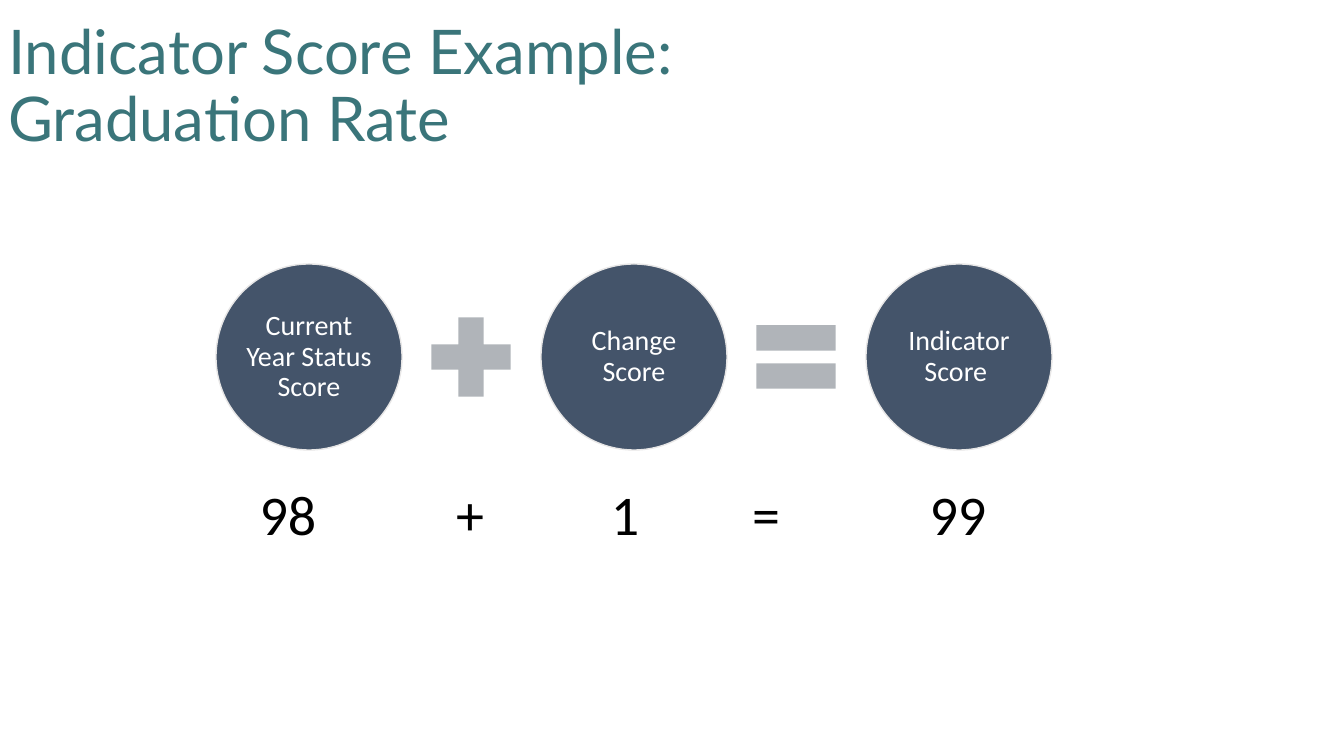
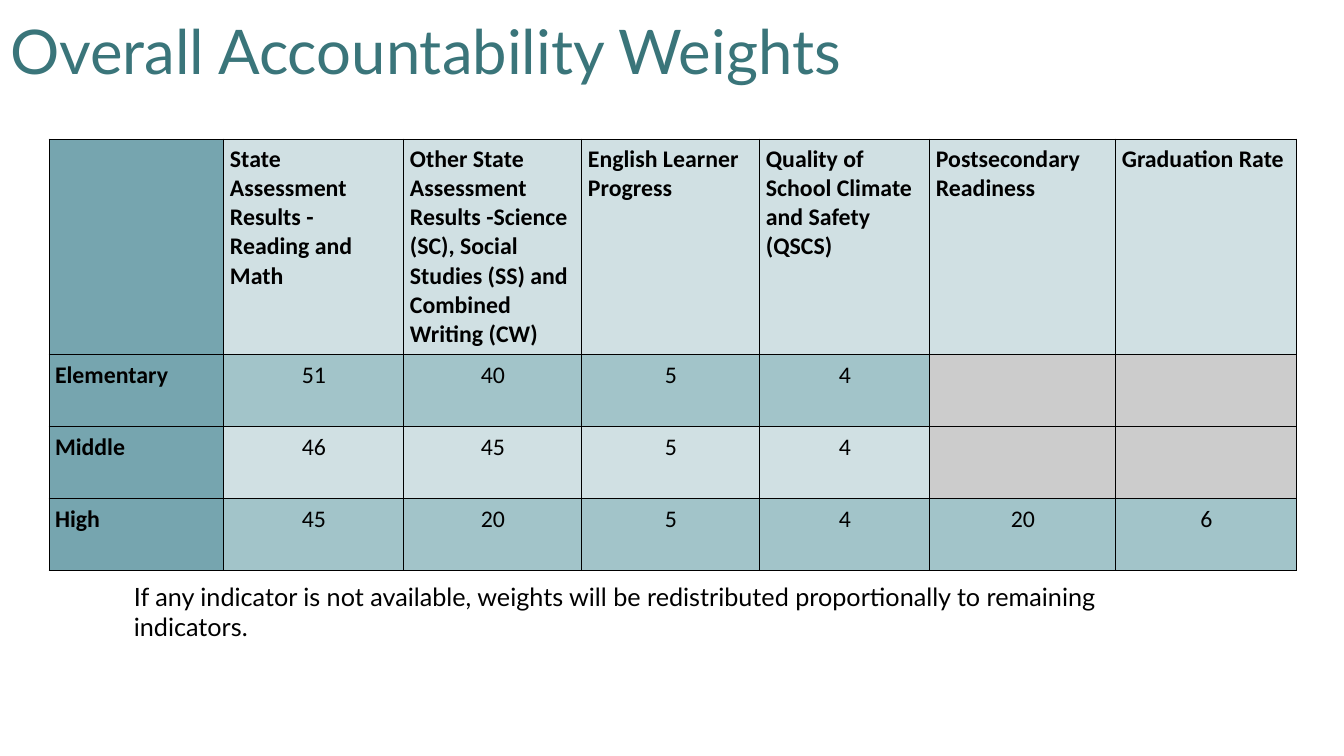
from dataclasses import dataclass

from lxml import etree
from pptx import Presentation
from pptx.dml.color import RGBColor
from pptx.enum.shapes import MSO_SHAPE
from pptx.enum.text import MSO_ANCHOR, MSO_AUTO_SIZE, PP_ALIGN
from pptx.oxml.ns import qn
from pptx.util import Emu, Pt

LEFT, CENTER = PP_ALIGN.LEFT, PP_ALIGN.CENTER
MIDDLE = MSO_ANCHOR.MIDDLE
ELLIPSE, PLUS, EQUAL = MSO_SHAPE.OVAL, MSO_SHAPE.MATH_PLUS, MSO_SHAPE.MATH_EQUAL
EMU_PER_PX = 914400 / 100.8
TITLE_ONLY = 5


@dataclass(frozen=True)
class Theme:
    title_font: str = "Lato"
    body_font: str = "Calibri"
    title: str = "3A757A"
    black: str = "000000"
    white: str = "FFFFFF"
    circle: str = "44546A"
    circle_line: str = "E7E6E6"
    sign: str = "B0B4B9"
    row_label: str = "76A5AF"
    light_row: str = "D0E0E3"
    dark_row: str = "A2C4C9"
    not_used: str = "CCCCCC"
    title_size: int = 44
    sum_size: int = 40
    circle_size: int = 20
    table_size: int = 17
    note_size: int = 18


theme = Theme()


def px(*lengths):
    return [Emu(round(length * EMU_PER_PX)) for length in lengths]


def add_run(paragraph, text, size, color, font=theme.body_font, bold=False):
    run = paragraph.add_run()
    run.text = text
    run.font.name = font
    run.font.size = Pt(size)
    run.font.bold = bold
    run.font.color.rgb = RGBColor.from_string(color)


presentation = Presentation()
presentation.slide_width, presentation.slide_height = px(1344, 756)

# Slides with their titles
slides = []
for title_left, title_top, title_lines in [
    (-2, 15, ["Indicator Score Example:", "Graduation Rate"]),
    (0, -18, ["Overall Accountability Weights"]),
]:
    slide = presentation.slides.add_slide(presentation.slide_layouts[TITLE_ONLY])
    title = slide.shapes.title
    title.left, title.top, title.width, title.height = px(title_left, title_top, 1159, 146)
    title.text_frame.auto_size = MSO_AUTO_SIZE.NONE
    title.text_frame.vertical_anchor = MIDDLE
    paragraph = title.text_frame.paragraphs[0]
    paragraph.alignment = LEFT
    paragraph.line_spacing = 0.9
    for index, line in enumerate(title_lines):
        if index:
            paragraph.add_line_break()
        add_run(paragraph, line, theme.title_size, theme.title, theme.title_font)
    slides.append(slide)
score_slide, weights_slide = slides

# Score equation: circles with a sign centred in each gap
CIRCLE_LEFT, CIRCLE_TOP, CIRCLE_SIZE, CIRCLE_STEP = 216, 264, 186, 325
SIGN_SIZE = 108
sign_offset = (CIRCLE_STEP + CIRCLE_SIZE - SIGN_SIZE) // 2
sign_top = CIRCLE_TOP + (CIRCLE_SIZE - SIGN_SIZE) // 2

for index, (label, sign_shape) in enumerate([
    ("Current Year Status Score", PLUS),
    ("Change Score", EQUAL),
    ("Indicator Score ", None),
]):
    left = CIRCLE_LEFT + index * CIRCLE_STEP
    circle = score_slide.shapes.add_shape(
        ELLIPSE, *px(left, CIRCLE_TOP, CIRCLE_SIZE, CIRCLE_SIZE))
    circle.shadow.inherit = False
    circle.fill.solid()
    circle.fill.fore_color.rgb = RGBColor.from_string(theme.circle)
    circle.line.color.rgb = RGBColor.from_string(theme.circle_line)
    circle.line.width = Pt(1)
    frame = circle.text_frame
    frame.word_wrap = True
    frame.vertical_anchor = MIDDLE
    frame.margin_left, frame.margin_top, frame.margin_right, frame.margin_bottom = px(3, 3, 3, 3)
    paragraph = frame.paragraphs[0]
    paragraph.alignment = CENTER
    paragraph.line_spacing = 0.9
    add_run(paragraph, label, theme.circle_size, theme.white)

    if sign_shape is not None:
        sign = score_slide.shapes.add_shape(
            sign_shape, *px(left + sign_offset, sign_top, SIGN_SIZE, SIGN_SIZE))
        sign.shadow.inherit = False
        sign.fill.solid()
        sign.fill.fore_color.rgb = RGBColor.from_string(theme.sign)
        sign.line.fill.background()

# Worked sum on centred tab stops
sum_box = score_slide.shapes.add_textbox(*px(0, 475, 1344, 78))
sum_box.text_frame.word_wrap = True
sum_box.text_frame.margin_left = 0
paragraph = sum_box.text_frame.paragraphs[0]
tab_list = etree.SubElement(paragraph._p.get_or_add_pPr(), qn("a:tabLst"))
for term, center in [("98", 288), ("+", 470), ("1", 625), ("=", 766), ("99", 958)]:
    etree.SubElement(tab_list, qn("a:tab"), pos=str(px(center)[0]), algn="ctr")
    add_run(paragraph, "\t" + term, theme.sum_size, theme.black)

# Weights table
COLUMN_WIDTHS = [175, 180, 178, 178, 170, 186, 181]
ROW_HEIGHTS = [216, 72, 72, 72]
ROWS = [
    ["", "State Assessment Results - Reading and Math",
     "Other State Assessment Results -Science (SC), Social Studies (SS) and Combined Writing (CW)",
     "English Learner Progress", "Quality of School Climate and Safety (QSCS)",
     "Postsecondary Readiness", "Graduation Rate"],
    ["Elementary", "51", "40", "5", "4", "", ""],
    ["Middle", "46", "45", "5", "4", "", ""],
    ["High", "45", "20", "5", "4", "20", "6"],
]
table = weights_slide.shapes.add_table(
    len(ROWS), len(COLUMN_WIDTHS), *px(49, 139, sum(COLUMN_WIDTHS), sum(ROW_HEIGHTS))).table
table.first_row = table.horz_banding = False
for column, width in zip(table.columns, px(*COLUMN_WIDTHS)):
    column.width = width
for row, height in zip(table.rows, px(*ROW_HEIGHTS)):
    row.height = height

for row_index, texts in enumerate(ROWS):
    for column_index, text in enumerate(texts):
        cell = table.cell(row_index, column_index)
        is_heading = row_index == 0 or column_index == 0
        if column_index == 0:
            fill = theme.row_label
        elif not text:
            fill = theme.not_used
        else:
            fill = theme.dark_row if row_index % 2 else theme.light_row
        cell.fill.solid()
        cell.fill.fore_color.rgb = RGBColor.from_string(fill)
        cell.margin_left, cell.margin_top, cell.margin_right, cell.margin_bottom = px(6, 6, 6, 6)
        if text:
            paragraph = cell.text_frame.paragraphs[0]
            paragraph.alignment = LEFT if is_heading else CENTER
            add_run(paragraph, text, theme.table_size, theme.black, bold=is_heading)
        # Borders come before the fill in the cell properties
        properties = cell._tc.get_or_add_tcPr()
        for position, side in enumerate(["a:lnL", "a:lnR", "a:lnT", "a:lnB"]):
            border = etree.Element(qn(side), w=str(Pt(0.8)))
            border_fill = etree.SubElement(border, qn("a:solidFill"))
            etree.SubElement(border_fill, qn("a:srgbClr"), val=theme.black)
            properties.insert(position, border)

# Note under the table
note = weights_slide.shapes.add_textbox(*px(124, 576, 1070, 72))
note.text_frame.word_wrap = True
add_run(note.text_frame.paragraphs[0],
        "If any indicator is not available, weights will be redistributed "
        "proportionally to remaining indicators.",
        theme.note_size, theme.black, theme.title_font)

presentation.save("out.pptx")
